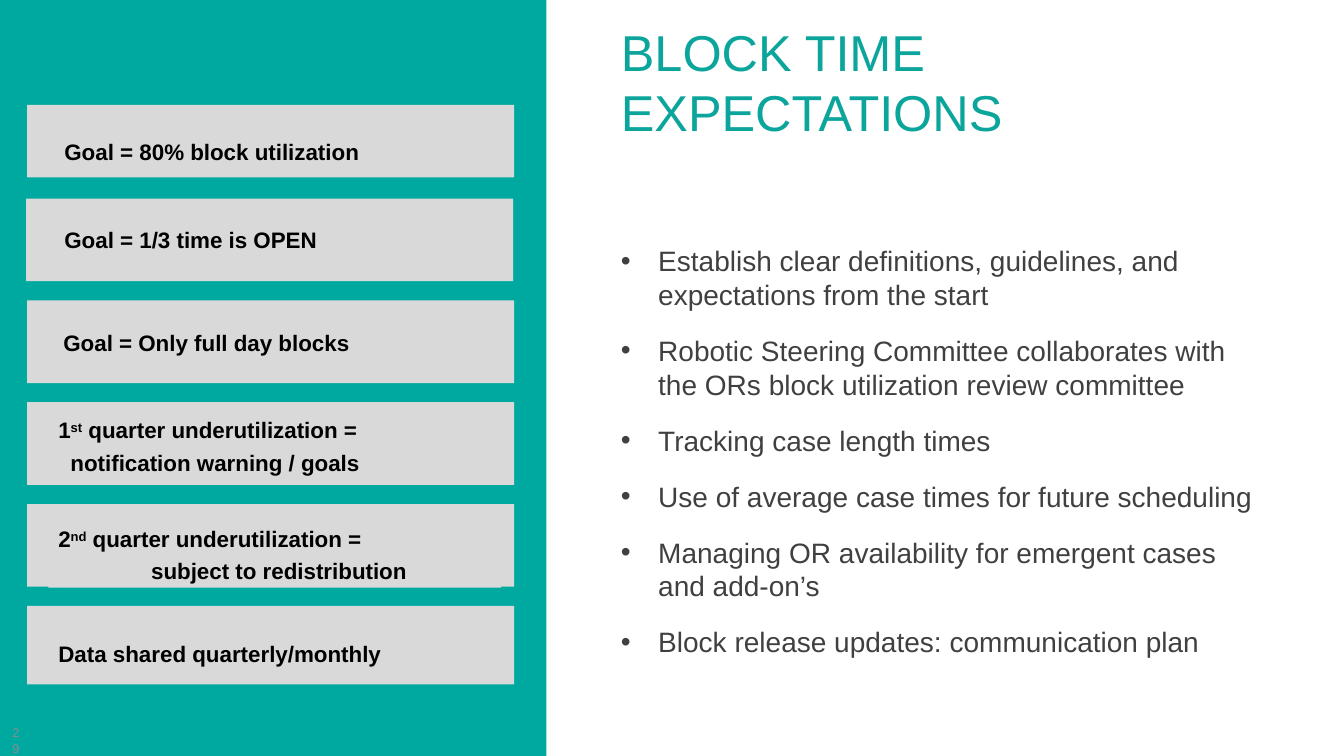
from lxml import etree
from pptx import Presentation, util as u
from pptx.dml.color import RGBColor
from pptx.enum import shapes, text
from pptx.oxml.ns import qn

PX = 9144  # 100 px to the inch
TEAL, GREY, BLACK = "00A9A0", "D9D9D9", "000000"

presentation = Presentation()
presentation.slide_width, presentation.slide_height = 1333 * PX, 750 * PX
slide = presentation.slides.add_slide(presentation.slide_layouts[6])


def add_box(left, top, width, height, fill=None):
    """Add a top-anchored, wrapping box; without a fill it is a text box."""
    area = [length * PX for length in (left, top, width, height)]
    if fill:
        shape = slide.shapes.add_shape(shapes.MSO_SHAPE.RECTANGLE, *area)
        shape.shadow.inherit = False
        shape.fill.solid()
        shape.fill.fore_color.rgb = RGBColor.from_string(fill)
        shape.line.fill.background()
    else:
        shape = slide.shapes.add_textbox(*area)
    shape.text_frame.word_wrap = True
    shape.text_frame.vertical_anchor = text.MSO_ANCHOR.TOP
    return shape


def style(paragraph, size, color, bold=False, align=text.PP_ALIGN.LEFT):
    paragraph.alignment = align
    for run in paragraph.runs:
        run.font.name = "Arial"
        run.font.size = u.Pt(size)
        run.font.bold = bold
        run.font.color.rgb = RGBColor.from_string(color)


# Left panel
add_box(0, 0, 542, 750, TEAL)

# Title
title = add_box(606, 16, 698, 149).text_frame
title.text = "BLOCK TIME EXPECTATIONS"
style(title.paragraphs[0], 36, "0BA59C")

# Bulleted expectations
expectations = [
    "Establish clear definitions, guidelines, and expectations from the start",
    "Robotic Steering Committee collaborates with the ORs block utilization review committee",
    "Tracking case length times",
    "Use of average case times for future scheduling",
    "Managing OR availability for emergent cases and add-on’s",
    "Block release updates: communication plan",
]
body = add_box(606, 171, 663, 487).text_frame
body.vertical_anchor = text.MSO_ANCHOR.BOTTOM
body.text = "\n".join(expectations)
for index, paragraph in enumerate(body.paragraphs):
    properties = paragraph._p.get_or_add_pPr()
    properties.set("marL", str(37 * PX))
    properties.set("indent", str(-37 * PX))
    etree.SubElement(properties, qn("a:buFont")).set("typeface", "Arial")
    etree.SubElement(properties, qn("a:buChar")).set("char", "•")
    paragraph.space_before = u.Pt(4 if index else 0)
    paragraph.space_after = u.Pt(12)
    style(paragraph, 20, "404040")

# Page number
page_number = add_box(0, 727, 29, 15).text_frame
page_number.vertical_anchor = text.MSO_ANCHOR.MIDDLE
page_number.text = "29"
style(page_number.paragraphs[0], 9, "8C8C8C", align=text.PP_ALIGN.RIGHT)

# Goal cards: card area, label area, first line as runs (every second one
# raised), second line, indent of the second line
cards = [
    ((27, 104, 483, 72), (54, 127, 442, 42), ["Goal = 80% block utilization"], "", 0),
    ((26, 197, 483, 82), (54, 214, 416, 42), ["Goal = 1/3 time is OPEN"], "", 0),
    ((27, 298, 483, 82), (53, 316, 418, 42), ["Goal = Only full day blocks"], "", 0),
    ((27, 399, 483, 82), (48, 403, 449, 75),
     ["1", "st", " quarter underutilization ="], "notification warning / goals", 12),
    ((27, 500, 483, 82), (48, 511, 449, 72),
     ["2", "nd", " quarter underutilization ="], "subject to redistribution", 92),
    ((27, 601, 483, 78), (48, 625, 449, 42), ["Data shared quarterly/monthly"], "", 0),
]
for card_area, label_area, first_line, second_line, indent in cards:
    add_box(*card_area, GREY)
    label = add_box(*label_area, GREY).text_frame
    for index, words in enumerate(first_line):
        run = label.paragraphs[0].add_run()
        run.text = words
        if index % 2:
            run.font._element.set("baseline", "30000")
    if second_line:
        paragraph = label.add_paragraph()
        paragraph.text = second_line
        paragraph._p.get_or_add_pPr().set("marL", str(indent * PX))
    for paragraph in label.paragraphs:
        paragraph.line_spacing = 1.2
        style(paragraph, 16, BLACK, bold=True)

presentation.save("out.pptx")
